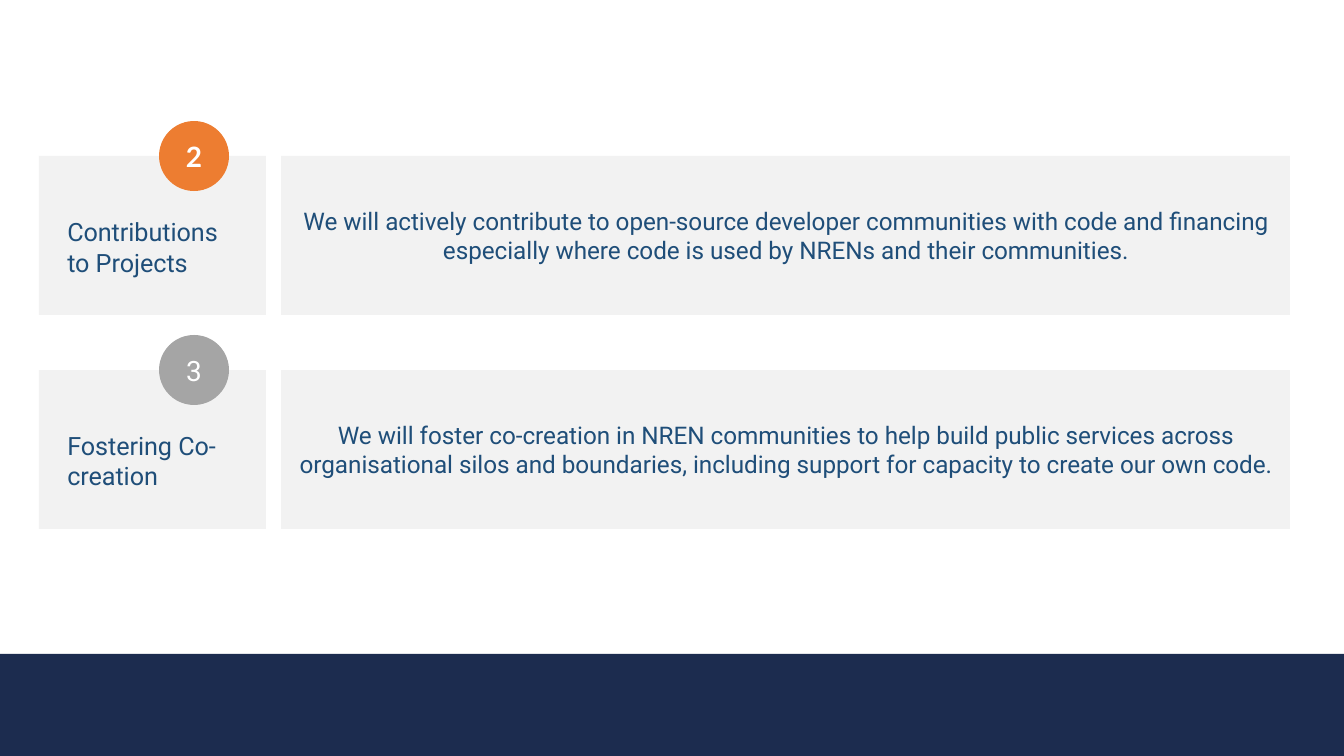
from pptx import Presentation
from pptx.dml.color import RGBColor
from pptx.enum.shapes import MSO_SHAPE as Shape
from pptx.enum.text import MSO_ANCHOR as Anchor, PP_ALIGN as Align
from pptx.util import Pt

PAGE_WIDTH, PAGE_HEIGHT = 1344, 756
SCALE = 9144000 / PAGE_WIDTH  # EMU per px on a 10 inch wide page

COLORS = {
    "navy": "1C2C4F",
    "panel": "F2F2F2",
    "text": "1F4E79",
    "orange": "ED7D31",
    "grey": "A5A5A5",
    "white": "FFFFFF",
}

LABEL_FONT = {"name": "Roboto", "size": Pt(13.5)}
BODY_FONT = {"name": "Roboto", "size": Pt(13)}

ROWS = [
    {
        "number": "2",
        "badge_color": "orange",
        "badge_font": {"name": "Lato", "size": Pt(15), "bold": True},
        "label": "Contributions to Projects",
        "label_width": 195,
        "body": "We will actively contribute to open-source developer communities "
                "with code and financing especially where code is used by NRENs "
                "and their communities.",
    },
    {
        "number": "3",
        "badge_color": "grey",
        "badge_font": {"name": "Roboto", "size": Pt(15)},
        "label": "Fostering Co-creation",
        "label_width": 179,
        "body": "We will foster co-creation in NREN communities to help build "
                "public services across organisational silos and boundaries, "
                "including support for capacity to create our own code.",
    },
]
ROW_LEFT, ROW_TOP, ROW_WIDTH, ROW_HEIGHT = 39, 156, 1251, 159
ROW_PITCH = 214


def px(value):
    return round(value * SCALE)


def rgb(name):
    return RGBColor.from_string(COLORS[name])


def write(shape, text, font, color, align):
    frame = shape.text_frame
    frame.word_wrap = True
    para = frame.paragraphs[0]
    para.alignment = align
    span = para.add_run()
    span.text = text
    for key, value in font.items():
        setattr(span.font, key, value)
    span.font.color.rgb = rgb(color)


def add_block(page, kind, box, fill):
    shape = page.shapes.add_shape(kind, *map(px, box))
    shape.shadow.inherit = False
    shape.fill.solid()
    shape.fill.fore_color.rgb = rgb(fill)
    shape.line.fill.background()
    return shape


def add_centred_block(page, kind, box, fill, text, font, color):
    shape = add_block(page, kind, box, fill)
    margins = {"margin_left": 5, "margin_right": 5,
               "margin_top": 3, "margin_bottom": 3}
    for key, value in margins.items():
        setattr(shape.text_frame, key, px(value))
    shape.text_frame.vertical_anchor = Anchor.MIDDLE
    write(shape, text, font, color, Align.CENTER)


def add_row(page, box, row):
    left, top, width, height = box
    card_width, gap, badge_size = 227, 15, 70

    # Label card with its numbered badge on the top edge
    add_block(page, Shape.RECTANGLE, (left, top, card_width, height), "panel")
    badge = (left + 120, top - badge_size // 2, badge_size, badge_size)
    add_centred_block(page, Shape.OVAL, badge, row["badge_color"],
                      row["number"], row["badge_font"], "white")
    label_box = (left + 15, top + 54, row["label_width"], 75)
    label = page.shapes.add_textbox(*map(px, label_box))
    write(label, row["label"], LABEL_FONT, "text", Align.LEFT)

    # Statement panel fills the rest of the row
    offset = card_width + gap
    panel = (left + offset, top, width - offset, height)
    add_centred_block(page, Shape.RECTANGLE, panel, "panel",
                      row["body"], BODY_FONT, "text")


def add_footer(page, box):
    add_block(page, Shape.RECTANGLE, box, "navy")


def main():
    deck = Presentation()
    deck.slide_width, deck.slide_height = px(PAGE_WIDTH), px(PAGE_HEIGHT)
    page = deck.slides.add_slide(deck.slide_layouts[6])

    footer_top = 654
    add_footer(page, (0, footer_top, PAGE_WIDTH, PAGE_HEIGHT - footer_top))
    for index, row in enumerate(ROWS):
        top = ROW_TOP + index * ROW_PITCH
        add_row(page, (ROW_LEFT, top, ROW_WIDTH, ROW_HEIGHT), row)

    deck.save("out.pptx")


if __name__ == "__main__":
    main()
